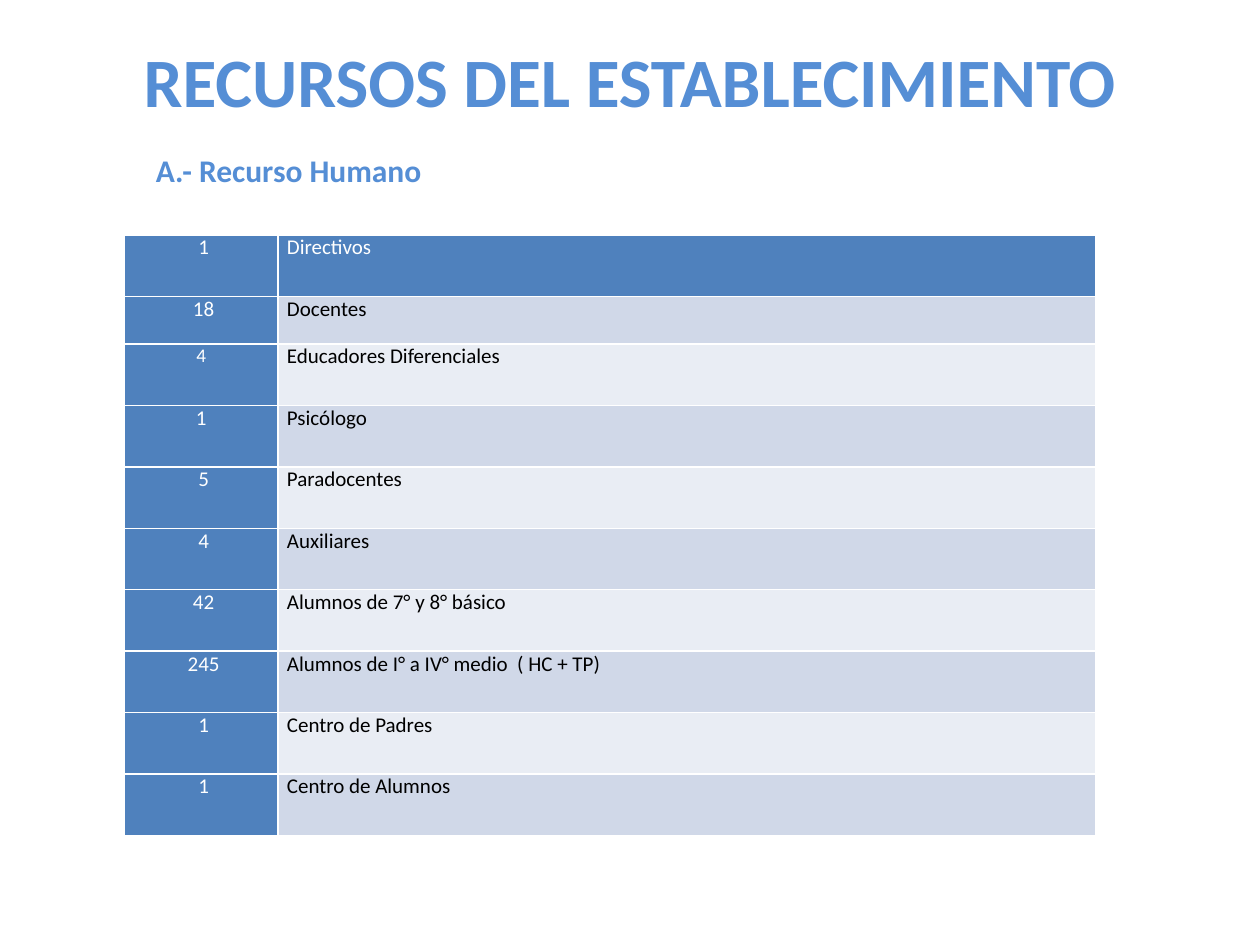
from dataclasses import dataclass

from lxml.etree import SubElement
from pptx import Presentation
from pptx.dml.color import RGBColor
from pptx.enum.text import MSO_ANCHOR, PP_ALIGN
from pptx.oxml.ns import qn
from pptx.util import Pt


@dataclass(frozen=True)
class Theme:
    font: str = "Calibri"
    title: str = "558ED5"
    head: str = "4F81BD"
    bands: tuple = ("E9EDF4", "D0D8E8")
    light: str = "FFFFFF"
    dark: str = "000000"
    big: float = 39.6
    mid: float = 18
    body: float = 12
    small: float = 11


THEME = Theme()

# Count and role; the first row is the header
STAFF = [
    (" 1", "Directivos"),
    (" 18", "Docentes"),
    ("4", "Educadores Diferenciales"),
    ("1", "Psicólogo"),
    (" 5", "Paradocentes"),
    (" 4", "Auxiliares"),
    (" 42", "Alumnos de 7° y 8° básico"),
    (" 245", "Alumnos de I° a IV° medio  ( HC + TP)"),
    (" 1", "Centro de Padres"),
    (" 1", "Centro de Alumnos"),
]
COLS = (87.6, 467.1)
ROW, SHORT = 35.1, 27.3
SHORT_ROW = 1
SMALL_ROW = 2


def style(para, size, color, bold=False, align=PP_ALIGN.LEFT):
    para.alignment = align
    for run in para.runs:
        font = run.font
        font.name, font.size, font.bold = THEME.font, Pt(size), bold
        font.color.rgb = RGBColor.from_string(color)


def add_text(slide, box, text, size, align=PP_ALIGN.LEFT, wrap=True, top=3.6):
    frame = slide.shapes.add_textbox(*map(Pt, box)).text_frame
    frame.word_wrap = wrap
    frame.vertical_anchor = MSO_ANCHOR.TOP
    frame.margin_top = Pt(top)
    frame.text = text
    style(frame.paragraphs[0], size, THEME.title, True, align)


def add_edges(cell, color, width=1):
    props = cell._tc.get_or_add_tcPr()
    for side in ("lnL", "lnR", "lnT", "lnB"):
        line = SubElement(props, qn(f"a:{side}"), w=str(Pt(width)))
        fill = SubElement(line, qn("a:solidFill"))
        SubElement(fill, qn("a:srgbClr"), val=color)


def fill_cell(cell, text, fill, color, size, align):
    cell.margin_left = cell.margin_right = Pt(5.2)
    cell.margin_top = cell.margin_bottom = 0
    add_edges(cell, THEME.light)
    cell.fill.solid()
    cell.fill.fore_color.rgb = RGBColor.from_string(fill)
    cell.text_frame.text = text
    style(cell.text_frame.paragraphs[0], size, color, align=align)


def add_staff(slide, left, top):
    tall = ROW * (len(STAFF) - 1) + SHORT
    table = slide.shapes.add_table(
        len(STAFF), len(COLS), Pt(left), Pt(top), Pt(sum(COLS)), Pt(tall)
    ).table
    table.first_col = True
    for col, width in zip(table.columns, COLS):
        col.width = Pt(width)
    for i, (count, role) in enumerate(STAFF):
        table.rows[i].height = Pt(SHORT if i == SHORT_ROW else ROW)
        size = THEME.small if i == SMALL_ROW else THEME.body
        fill_cell(table.cell(i, 0), count, THEME.head, THEME.light, size,
                  PP_ALIGN.CENTER)
        # Header row is solid, the rest alternate
        fill, color = ((THEME.bands[i % 2], THEME.dark) if i
                       else (THEME.head, THEME.light))
        fill_cell(table.cell(i, 1), role, fill, color, THEME.body,
                  PP_ALIGN.LEFT)


def main():
    deck = Presentation()
    deck.slide_width, deck.slide_height = Pt(720), Pt(540)
    slide = deck.slides.add_slide(deck.slide_layouts[6])

    # Headings
    add_text(slide, (36, 21.6, 648, 90), "RECURSOS DEL ESTABLECIMIENTO",
             THEME.big, PP_ALIGN.CENTER, top=0)
    add_text(slide, (82, 82.8, 168.5, 29), "A.- Recurso Humano",
             THEME.mid, wrap=False)

    # Staff table
    add_staff(slide, 71.2, 134.2)

    deck.save("out.pptx")


if __name__ == "__main__":
    main()
